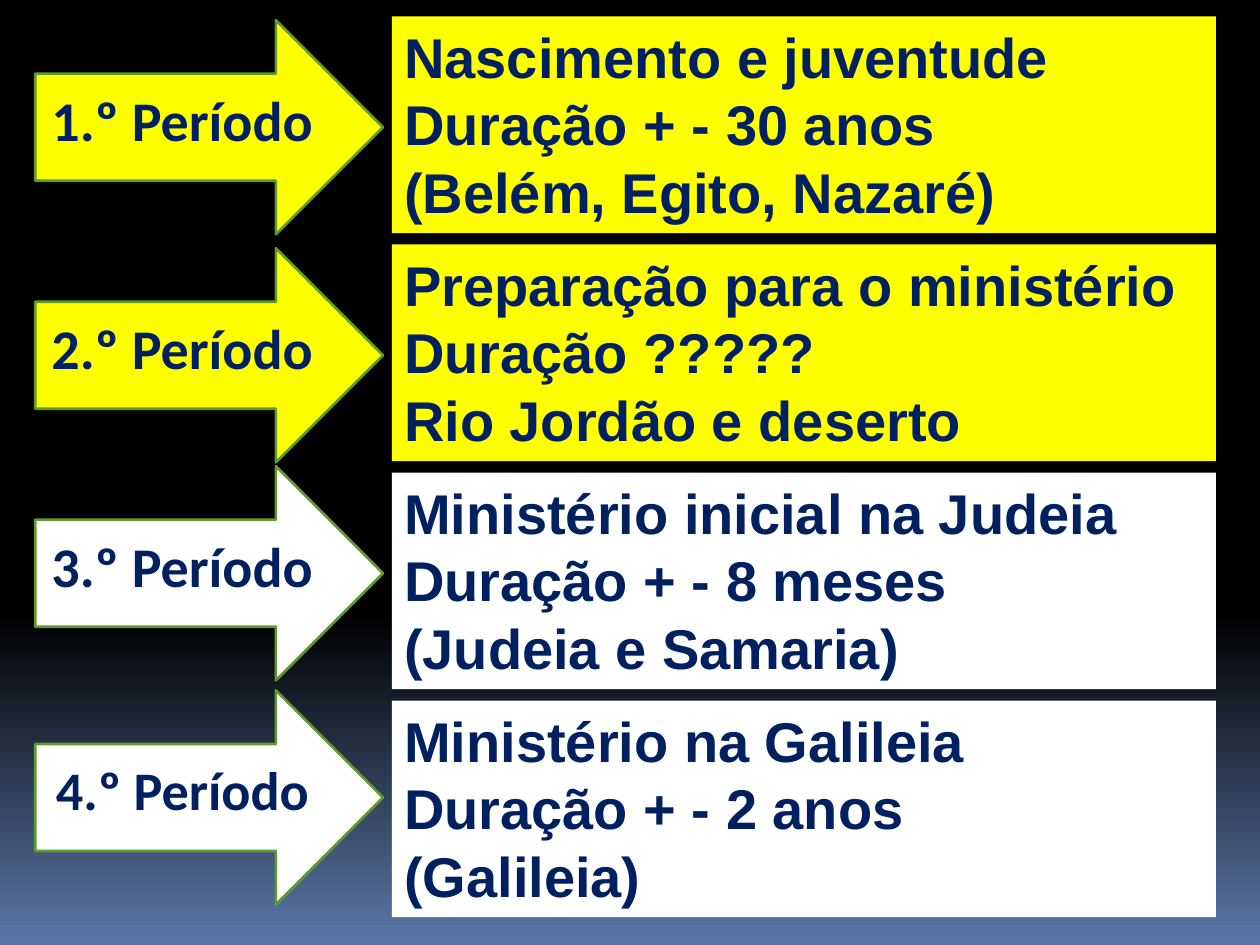
import copy

import pptx
import pptx.dml.color
import pptx.enum.shapes
import pptx.enum.text
import pptx.util

Inches = pptx.util.Inches
Pt = pptx.util.Pt

COLORS = {
    "black": "000000",
    "blue": "5B77A8",
    "navy": "002060",
    "green": "5E9B2C",
    "yellow": "FFFF00",
    "white": "FFFFFF",
}

# Fill, arrow top, arrow text size, lines of the description
PERIODS = [
    ("yellow", 0.16, 32, ["Nascimento e juventude", "Duração + - 30 anos",
                          "(Belém, Egito, Nazaré)"]),
    ("yellow", 1.97, 32, ["Preparação para o ministério", "Duração ?????",
                          "Rio Jordão e deserto"]),
    ("white", 3.7, 32, ["Ministério inicial na Judeia", "Duração + - 8 meses",
                        "(Judeia e Samaria)"]),
    ("white", 5.48, 31, ["Ministério na Galileia", "Duração + - 2 anos",
                         "(Galileia)"]),
]
BOX_TOP, BOX_STEP = 0.13, 1.81


def rgb(name):
    return pptx.dml.color.RGBColor.from_string(COLORS[name])


def paint(shape, color):
    shape.fill.solid()
    shape.fill.fore_color.rgb = rgb(color)


def add_span(para, text, font, size):
    span = para.add_run()
    span.text = text
    span.font.name = font
    span.font.size = Pt(size)
    span.font.bold = True
    span.font.color.rgb = rgb("navy")


def set_background(page):
    """Black down to 65 %, then fading to blue at the bottom."""
    fill = page.background.fill
    fill.gradient()
    fill.gradient_angle = 270
    first, last = fill.gradient_stops
    first.color.rgb = rgb("black")
    first.position = 0
    last.color.rgb = rgb("blue")
    last.position = 1
    start = page.element.xpath(".//a:gsLst/a:gs")[0]
    middle = copy.deepcopy(start)
    middle.set("pos", "65000")
    start.addnext(middle)


def add_description(page, top, color, lines):
    box = page.shapes.add_textbox(Inches(3.11), Inches(top), Inches(6.54), Inches(1.72))
    paint(box, color)
    frame = box.text_frame
    frame.word_wrap = True
    frame.auto_size = pptx.enum.text.MSO_AUTO_SIZE.SHAPE_TO_FIT_TEXT
    for index, line in enumerate(lines):
        para = frame.add_paragraph() if index else frame.paragraphs[0]
        # Hanging indent of one inch
        properties = para._p.get_or_add_pPr()
        properties.set("marL", str(Inches(1)))
        properties.set("indent", str(-Inches(1)))
        add_span(para, line, "Arial", 32)


def add_arrow(page, top, color, text, size):
    arrow = page.shapes.add_shape(
        pptx.enum.shapes.MSO_SHAPE.RIGHT_ARROW,
        Inches(0.28), Inches(top), Inches(2.76), Inches(1.7))
    arrow.shadow.inherit = False
    paint(arrow, color)
    arrow.line.color.rgb = rgb("green")
    arrow.line.width = Pt(1.5)
    frame = arrow.text_frame
    frame.word_wrap = True
    frame.vertical_anchor = pptx.enum.text.MSO_ANCHOR.MIDDLE
    # A deeper bottom margin lifts the label slightly above the middle
    frame.margin_bottom = Inches(0.18)
    para = frame.paragraphs[0]
    para.alignment = pptx.enum.text.PP_ALIGN.CENTER
    add_span(para, text, "Calibri", size)


def main():
    deck = pptx.Presentation()
    deck.slide_width = Inches(10)
    deck.slide_height = Inches(7.5)
    page = deck.slides.add_slide(deck.slide_layouts[6])
    set_background(page)

    # Descriptions on the right
    for index, (color, _, _, lines) in enumerate(PERIODS):
        add_description(page, BOX_TOP + index * BOX_STEP, color, lines)

    # Period arrows on the left
    for number, (color, top, size, _) in enumerate(PERIODS, start=1):
        add_arrow(page, top, color, f"{number}.º Período", size)

    deck.save("out.pptx")


if __name__ == "__main__":
    main()
